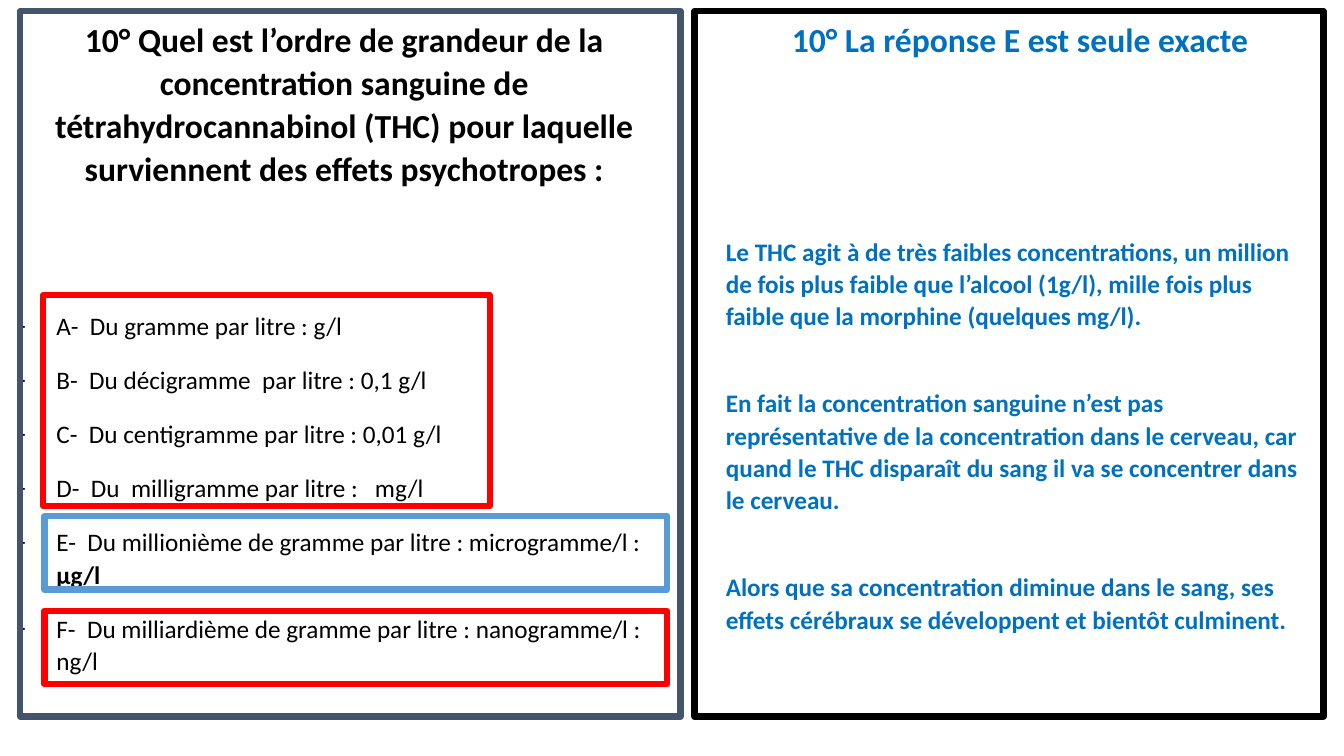
from dataclasses import dataclass

from lxml import etree
from pptx import Presentation
from pptx.dml.color import RGBColor
from pptx.enum.shapes import MSO_SHAPE
from pptx.enum.text import MSO_ANCHOR, MSO_AUTO_SIZE, PP_ALIGN
from pptx.oxml.ns import qn
from pptx.util import Inches, Pt

RECTANGLE = MSO_SHAPE.RECTANGLE
TOP, NO_AUTOFIT = MSO_ANCHOR.TOP, MSO_AUTO_SIZE.NONE
CENTER, LEFT = PP_ALIGN.CENTER, PP_ALIGN.LEFT

COLORS = {
    "question": "000000",
    "answer": "0070C0",
    "question_panel": "44546A",
    "answer_panel": "000000",
    "wrong": "FF0000",
    "right": "5B9BD5",
}
FONT = "Calibri"
COMPARISON_LAYOUT = 4

# Grid of 133.3 columns by 75 rows
CELL = Inches(0.1)
COLUMNS, ROWS = 133.33, 75


@dataclass(frozen=True)
class Area:
    column: float
    row: float
    columns: float
    rows: float


@dataclass(frozen=True)
class Frame:
    area: Area
    color: str


@dataclass(frozen=True)
class TextBlock:
    placeholder: int
    area: Area
    paragraphs: list[list[str]]  # every second run switches weight
    color: str
    size: int
    bold: bool
    align: PP_ALIGN
    gap: float
    bullet: str = ""
    indent: float = 0


QUESTION = [["10° Quel est l’ordre de grandeur de la concentration sanguine de "
             "tétrahydrocannabinol (THC) pour laquelle surviennent des effets "
             "psychotropes :"]]
CHOICES = [
    ["A-  Du gramme par litre : g/l"],
    ["B-  Du décigramme  par litre : 0,1 g/l"],
    ["C-  Du centigramme par litre : 0,01 g/l"],
    ["D-  Du  milligramme par litre :   mg/l"],
    ["E-  Du millionième de gramme par litre : microgramme/l : ", "µg/l"],
    ["F-  Du milliardième de gramme par litre : nanogramme/l : ng/l"],
]
ANSWER = [["10° La réponse E est seule exacte"]]
EXPLANATIONS = [
    ["Le THC agit à de très faibles concentrations, un million de fois plus "
     "faible que l’alcool (1g/l), mille fois plus faible que la morphine "
     "(quelques mg/l)."],
    ["En fait la concentration sanguine n’est pas représentative de la "
     "concentration dans le cerveau, car quand le THC disparaît du sang il va "
     "se concentrer dans le cerveau."],
    ["Alors que sa concentration diminue dans le sang, ses effets cérébraux se "
     "développent et bientôt culminent."],
]

TEXT_BLOCKS = [
    TextBlock(0, Area(0.8, 1.1, 66.7, 20), QUESTION, "question", 24, True, CENTER, 8),
    TextBlock(2, Area(0.8, 30.1, 66.7, 37.9), CHOICES, "question", 18, False, LEFT,
              15.5, "-", 3.8),
    TextBlock(1, Area(71, 1.1, 60.4, 6), ANSWER, "answer", 24, True, CENTER, 8),
    TextBlock(4, Area(71, 22.7, 60.4, 41.2), EXPLANATIONS, "answer", 18, True, LEFT, 39),
]
FRAMES = [
    Frame(Area(2, 1.1, 65.5, 70), "question_panel"),
    Frame(Area(68.9, 1.1, 62.4, 70), "answer_panel"),
    Frame(Area(4.4, 51.2, 61.8, 7.3), "right"),
    Frame(Area(4.4, 60.6, 61.8, 7.3), "wrong"),
    Frame(Area(4.3, 29.3, 44.3, 20.9), "wrong"),
]


def grid(cells: float) -> int:
    return round(cells * CELL)


def place(area: Area) -> dict[str, int]:
    return {"left": grid(area.column), "top": grid(area.row),
            "width": grid(area.columns), "height": grid(area.rows)}


def apply(target, formats: dict) -> None:
    for attribute, value in formats.items():
        setattr(target, attribute, value)


def set_bullet(paragraph, block: TextBlock) -> None:
    properties = paragraph._p.get_or_add_pPr()
    properties.set("marL", str(grid(block.indent)))
    properties.set("indent", str(-grid(block.indent)))
    if block.bullet:
        etree.SubElement(properties, qn("a:buFont"), typeface=FONT)
        etree.SubElement(properties, qn("a:buChar"), char=block.bullet)
    else:
        etree.SubElement(properties, qn("a:buNone"))


def write_block(slide, block: TextBlock) -> None:
    holder = slide.placeholders[block.placeholder]
    apply(holder, place(block.area))
    text = holder.text_frame
    apply(text, {"word_wrap": True, "auto_size": NO_AUTOFIT, "vertical_anchor": TOP})
    for number, runs in enumerate(block.paragraphs):
        paragraph = text.add_paragraph() if number else text.paragraphs[0]
        apply(paragraph, {"alignment": block.align, "line_spacing": 1.07,
                          "space_before": Pt(0), "space_after": Pt(block.gap)})
        set_bullet(paragraph, block)
        for position, words in enumerate(runs):
            run = paragraph.add_run()
            run.text = words
            apply(run.font, {"name": FONT, "size": Pt(block.size),
                             "bold": block.bold != bool(position % 2)})
            run.font.color.rgb = RGBColor.from_string(COLORS[block.color])


def draw_frame(slide, frame: Frame) -> None:
    outline = slide.shapes.add_shape(RECTANGLE, **place(frame.area))
    outline.shadow.inherit = False
    outline.fill.background()
    outline.line.width = Pt(4.5)
    outline.line.color.rgb = RGBColor.from_string(COLORS[frame.color])


def main() -> None:
    deck = Presentation()
    apply(deck, {"slide_width": grid(COLUMNS), "slide_height": grid(ROWS)})
    slide = deck.slides.add_slide(deck.slide_layouts[COMPARISON_LAYOUT])

    # Question on the left, answer on the right
    for block in TEXT_BLOCKS:
        write_block(slide, block)

    # Panels and marks around the choices
    for frame in FRAMES:
        draw_frame(slide, frame)

    # Placeholders without text
    for holder in list(slide.placeholders):
        if not holder.text_frame.text:
            holder.element.getparent().remove(holder.element)

    deck.save("out.pptx")


if __name__ == "__main__":
    main()
